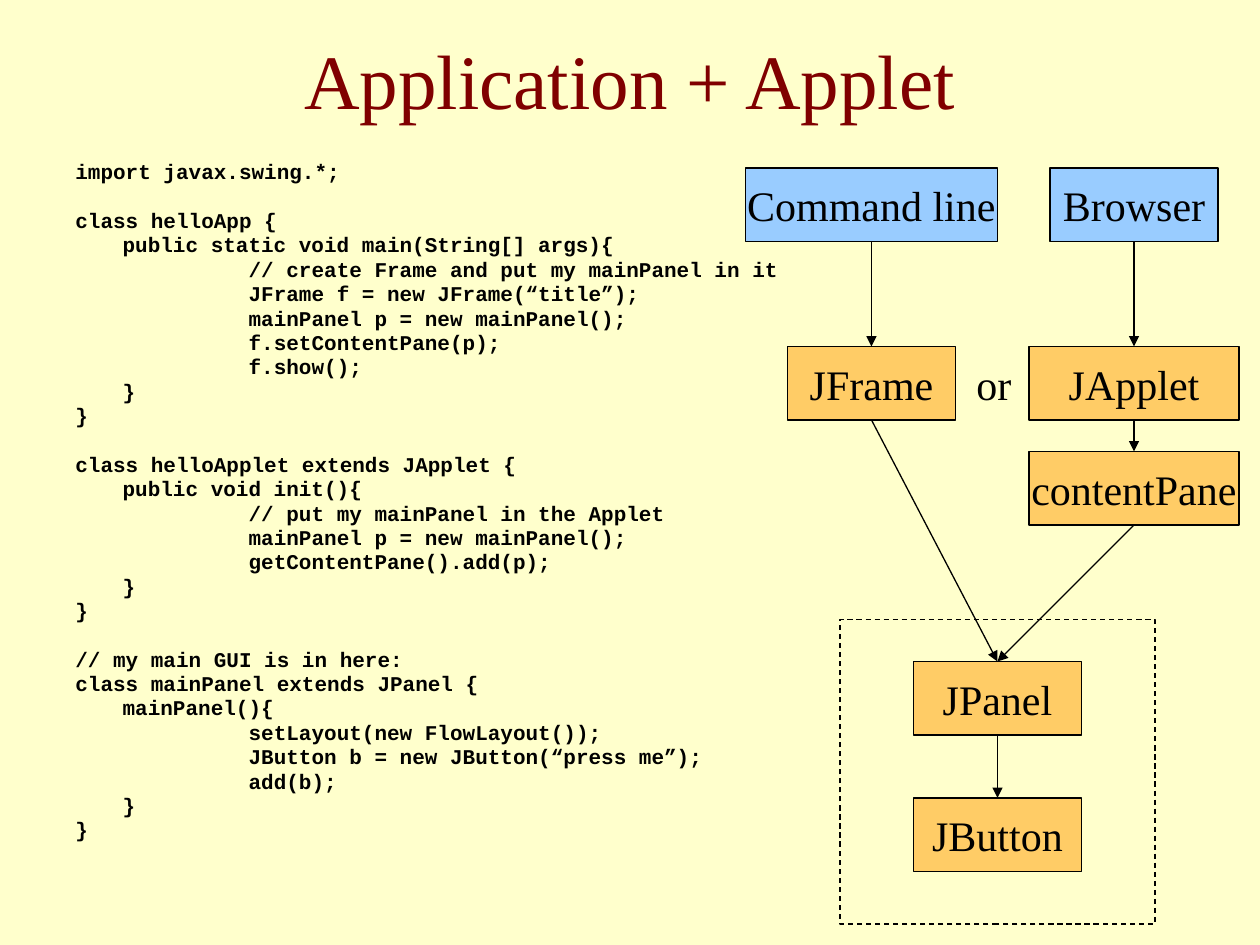
from pptx import Presentation
from pptx.dml.color import RGBColor
from pptx.enum.dml import MSO_LINE_DASH_STYLE as DASH
from pptx.enum.shapes import MSO_CONNECTOR, MSO_SHAPE
from pptx.enum.text import MSO_ANCHOR, MSO_AUTO_SIZE, PP_ALIGN
from pptx.oxml.ns import qn
from pptx.util import Pt
from lxml.etree import SubElement

CREAM = RGBColor(0xFF, 0xFF, 0xCC)
MAROON = RGBColor(0x80, 0x00, 0x00)
BLACK = RGBColor(0x00, 0x00, 0x00)
ORANGE = RGBColor(0xFF, 0xCC, 0x66)
BLUE = RGBColor(0x99, 0xCC, 0xFF)
SERIF, MONO = "Times New Roman", "Courier New"
BOTTOM, TOP = 2, 0

CODE = """import javax.swing.*;

class helloApp {
\tpublic static void main(String[] args){
\t\t// create Frame and put my mainPanel in it
\t\tJFrame f = new JFrame(“title”);
\t\tmainPanel p = new mainPanel();
\t\tf.setContentPane(p);
\t\tf.show();
\t}
}

class helloApplet extends JApplet {
\tpublic void init(){
\t\t// put my mainPanel in the Applet
\t\tmainPanel p = new mainPanel();
\t\tgetContentPane().add(p);
\t}
}

// my main GUI is in here:
class mainPanel extends JPanel {
\tmainPanel(){
\t\tsetLayout(new FlowLayout());
\t\tJButton b = new JButton(“press me”);
\t\tadd(b);
\t}
}"""


class Diagram:
    box_height = 42
    line_width = 0.75
    label_size = 24

    def __init__(self, slide):
        self.s = slide
        slide.background.fill.solid()
        slide.background.fill.fore_color.rgb = CREAM

    def run(self, p, text, size, color=BLACK, font=SERIF, bold=False):
        r = p.add_run()
        r.text = text
        r.font.size, r.font.name, r.font.bold = Pt(size), font, bold
        r.font.color.rgb = color

    def text_frame(self, x, y, w, h, wrap=True):
        tf = self.s.shapes.add_textbox(Pt(x), Pt(y), Pt(w), Pt(h)).text_frame
        tf.word_wrap = wrap
        return tf

    def title(self, text, x, y, w, h):
        tf = self.text_frame(x, y, w, h)
        tf.vertical_anchor = MSO_ANCHOR.MIDDLE
        p = tf.paragraphs[0]
        p.alignment = PP_ALIGN.CENTER
        self.run(p, text, 44, MAROON)

    def label(self, text, x, y, w, h):
        tf = self.text_frame(x, y, w, h, wrap=False)
        tf.auto_size = MSO_AUTO_SIZE.SHAPE_TO_FIT_TEXT
        self.run(tf.paragraphs[0], text, self.label_size)

    def code(self, text, x, y, w, h, indent=27, tab=72, gap=2.4, block_gap=16.4):
        """One paragraph per line; a blank line becomes space before the next block."""
        tf = self.text_frame(x, y, w, h)
        p = tf.paragraphs[0]
        for b, block in enumerate(text.split("\n\n")):
            for n, line in enumerate(block.split("\n")):
                if b or n:
                    p = tf.add_paragraph()
                    p.space_before = Pt(gap if n else block_gap)
                p.line_spacing = 0.8
                pPr = p._p.get_or_add_pPr()
                pPr.set("marL", str(Pt(indent)))
                pPr.set("indent", str(Pt(-indent)))
                pPr.set("defTabSz", str(Pt(tab)))
                self.run(p, line, 12, font=MONO, bold=True)

    def rect(self, x, y, w, h, fill=None):
        sp = self.s.shapes.add_shape(MSO_SHAPE.RECTANGLE, Pt(x), Pt(y), Pt(w), Pt(h))
        sp.shadow.inherit = False
        if fill is None:
            sp.fill.background()
        else:
            sp.fill.solid()
            sp.fill.fore_color.rgb = fill
        sp.line.color.rgb = BLACK
        sp.line.width = Pt(self.line_width)
        return sp

    def box(self, text, center, y, w=96, fill=ORANGE):
        sp = self.rect(center - w / 2, y, w, self.box_height, fill)
        tf = sp.text_frame
        tf.word_wrap = False
        tf.vertical_anchor = MSO_ANCHOR.MIDDLE
        p = tf.paragraphs[0]
        p.alignment = PP_ALIGN.CENTER
        self.run(p, text, self.label_size)
        return sp

    def dashed_frame(self, x, y, w, h):
        self.rect(x, y, w, h).line.dash_style = DASH.DASH

    def arrow(self, upper, lower):
        c = self.s.shapes.add_connector(MSO_CONNECTOR.STRAIGHT, 0, 0, 0, 0)
        c.begin_connect(upper, BOTTOM)
        c.end_connect(lower, TOP)
        c.line.color.rgb = BLACK
        c.line.width = Pt(self.line_width)
        SubElement(c.line._get_or_add_ln(), qn("a:tailEnd"), type="triangle")
        SubElement(c._element.spPr, qn("a:effectLst"))


def main():
    prs = Presentation()
    prs.slide_width, prs.slide_height = Pt(720), Pt(540)
    d = Diagram(prs.slides.add_slide(prs.slide_layouts[6]))

    d.title("Application + Applet", 6, 0, 708, 90)
    d.code(CODE, 36, 90, 684, 450)

    app_x, panel_x, applet_x = 498, 570, 648
    command = d.box("Command line", app_x, 96, 144, BLUE)
    browser = d.box("Browser", applet_x, 96, fill=BLUE)
    frame = d.box("JFrame", app_x, 198)
    applet = d.box("JApplet", applet_x, 198, 120)
    content = d.box("contentPane", applet_x, 258, 120)
    panel = d.box("JPanel", panel_x, 378)
    button = d.box("JButton", panel_x, 456)
    d.label("or", 550.8, 201.6, 34.6, 36)

    for upper, lower in [(command, frame), (browser, applet), (applet, content),
                         (frame, panel), (content, panel), (panel, button)]:
        d.arrow(upper, lower)
    d.dashed_frame(480, 354, 180, 174)

    prs.save("out.pptx")


if __name__ == "__main__":
    main()
